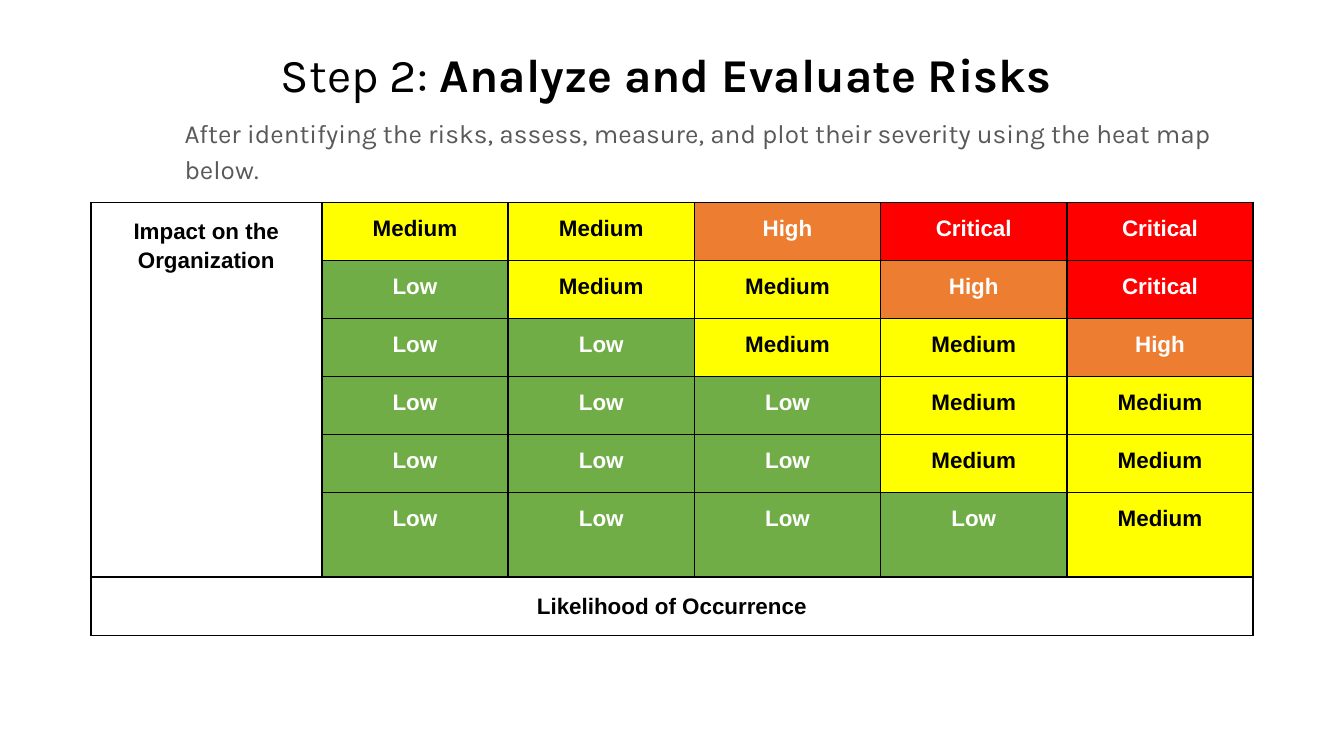
from dataclasses import dataclass
from lxml import etree
from pptx import Presentation, util as u
from pptx.dml.color import RGBColor
from pptx.enum import text as t
from pptx.oxml import ns


@dataclass
class Theme:
    """Holds the colours, fonts and type sizes."""
    ink: str = "000000"
    grey: str = "595959"
    head: str = "Karla"
    cell: str = "Arial"
    big: float = 25.2
    mid: float = 14
    small: float = 12


LEVELS = {
    "L": ("Low", "70AD47", "FFFFFF"),
    "M": ("Medium", "FFFF00", "000000"),
    "H": ("High", "ED7D31", "FFFFFF"),
    "C": ("Critical", "FF0000", "FFFFFF"),
}
HEAT = ["MMHCC", "LMMHC", "LLMMH", "LLLMM", "LLLMM", "LLLLM"]


def write(para, words, font, size, color, bold=False, align=t.PP_ALIGN.CENTER,
          line=1, before=0, after=0, inset=0):
    """Adds a run to a paragraph and formats both."""
    run = para.add_run()
    run.text = words
    run.font.name, run.font.size, run.font.bold = font, u.Pt(size), bold
    run.font.color.rgb = RGBColor.from_string(color)
    para.alignment, para.line_spacing = align, line
    para.space_before, para.space_after = u.Pt(before), u.Pt(after)
    props = para._p.get_or_add_pPr()
    for name, value in (("marL", inset), ("marR", inset), ("indent", 0)):
        props.set(name, str(u.Inches(value)))


class Deck:
    """Draws on one slide, on a grid of 100 columns with square units."""

    def __init__(self, theme):
        """Opens a slide with a title and a body."""
        self.theme = theme
        self.prs = Presentation()
        self.prs.slide_width = u.Inches(10)
        self.prs.slide_height = self.prs.slide_width * 9 // 16
        self.unit = self.prs.slide_width / 100
        self.slide = self.prs.slides.add_slide(self.prs.slide_layouts[1])

    def size(self, *cells):
        """Turns grid units into lengths."""
        return [u.Emu(round(c * self.unit)) for c in cells]

    def place(self, shape, *box):
        """Moves a placeholder and returns its first paragraph."""
        shape.left, shape.top, shape.width, shape.height = self.size(*box)
        frame = shape.text_frame
        frame.word_wrap, frame.auto_size = True, t.MSO_AUTO_SIZE.NONE
        frame.vertical_anchor = t.MSO_ANCHOR.TOP
        frame.margin_left = frame.margin_right = u.Inches(0.1)
        frame.margin_top = frame.margin_bottom = u.Inches(0.1)
        return frame.paragraphs[0]

    def title(self, plain, strong, *box):
        """Fills the title with a plain and a bold part."""
        para = self.place(self.slide.shapes.title, *box)
        for words, bold in ((plain, False), (strong, True)):
            write(para, words, self.theme.head, self.theme.big, self.theme.ink, bold)

    def body(self, words, *box):
        """Fills the body with one paragraph without a bullet."""
        para = self.place(self.slide.placeholders[1], *box)
        write(para, words, self.theme.head, self.theme.mid, self.theme.grey,
              align=t.PP_ALIGN.LEFT, line=1.15, after=12)
        etree.SubElement(para._p.get_or_add_pPr(), ns.qn("a:buNone"))

    def frame(self, cell):
        """Gives a cell its margins, black borders and no fill."""
        cell.margin_left = cell.margin_right = u.Inches(0.07)
        cell.margin_top = cell.margin_bottom = u.Inches(0.1)
        props = cell._tc.get_or_add_tcPr()
        for side in ("lnL", "lnR", "lnT", "lnB"):
            line = etree.SubElement(props, ns.qn(f"a:{side}"), w=str(u.Pt(1)))
            fill = etree.SubElement(line, ns.qn("a:solidFill"))
            etree.SubElement(fill, ns.qn("a:srgbClr"), val=self.theme.ink)
        cell.fill.background()

    def label(self, cell, words, color=None, **form):
        """Writes bold text in a cell."""
        write(cell.text_frame.paragraphs[0], words, self.theme.cell,
              self.theme.small, color or self.theme.ink, True, **form)

    def heat(self, side, foot, left, top, cols, rows):
        """Draws the heat map with a merged side and foot label."""
        box = self.size(left, top, sum(cols), sum(rows))
        table = self.slide.shapes.add_table(len(rows), len(cols), *box).table
        table.first_row = table.horz_banding = False
        for col, width in zip(table.columns, self.size(*cols)):
            col.width = width
        for row, height in zip(table.rows, self.size(*rows)):
            row.height = height
        for cell in table.iter_cells():
            self.frame(cell)
        last = len(rows) - 1
        table.cell(0, 0).merge(table.cell(last - 1, 0))
        table.cell(last, 0).merge(table.cell(last, len(cols) - 1))
        self.label(table.cell(0, 0), side, line=1.15, before=8, inset=0.08)
        self.label(table.cell(last, 0), foot, line=1.15)
        for r, codes in enumerate(HEAT):
            for c, code in enumerate(codes, 1):
                words, fill, color = LEVELS[code]
                cell = table.cell(r, c)
                cell.fill.solid()
                cell.fill.fore_color.rgb = RGBColor.from_string(fill)
                self.label(cell, words, color, before=4, after=4)


def main():
    """Builds and saves the slide."""
    deck = Deck(Theme())
    deck.title("Step 2:", " Analyze and Evaluate Risks ", 3.4, 2.4, 93.2, 6.3)
    deck.body("After identifying the risks, assess, measure, and plot their "
              "severity using the heat map below.", 12.73, 7.4, 81.4, 8.5)
    deck.heat("Impact on the Organization", "Likelihood of Occurrence",
              6.75, 15.06, [17.2] + [13.86] * 5, [4.32] * 5 + [6.3, 4.32])
    deck.prs.save("out.pptx")


if __name__ == "__main__":
    main()
